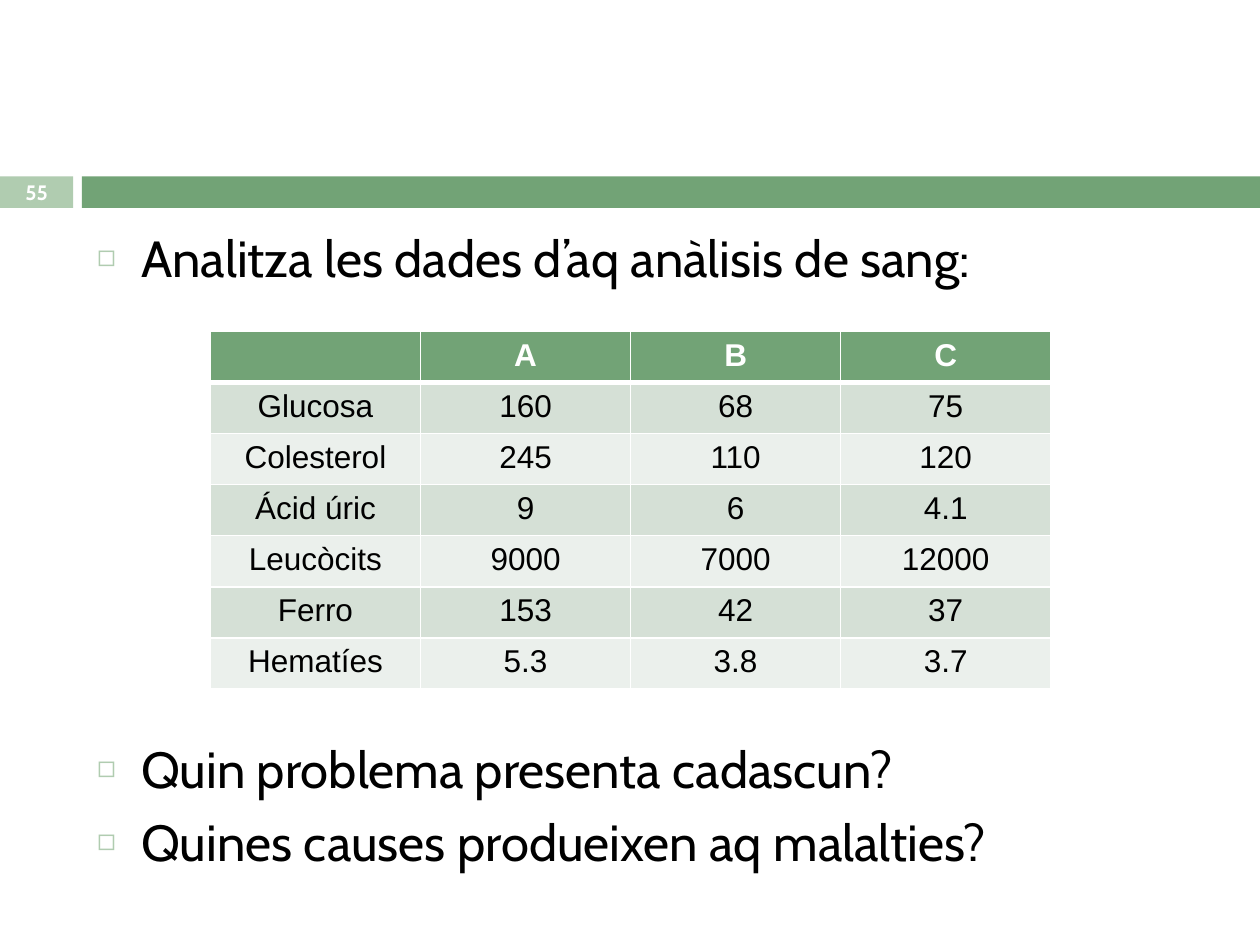
from lxml.etree import SubElement
from pptx import Presentation
from pptx.dml.color import RGBColor
from pptx.enum.shapes import MSO_SHAPE as SHAPE
from pptx.enum.text import MSO_ANCHOR as ANCHOR, PP_ALIGN as ALIGN
from pptx.oxml.ns import qn
from pptx.util import Inches, Pt

COLORS = {"green": "72A376", "pale": "B0CCB0", "band": "D5E0D6",
          "light": "EBF0EC", "white": "FFFFFF", "black": "000000"}
PAGE = "55"
BARS = [("pale", 0, 0.58, PAGE), ("green", 0.65, 9.35, "")]
POINTS = [("Analitza les dades d’aq anàlisis de sang:", 7),
          ("Quin problema presenta cadascun?", 257),
          ("Quines causes produeixen aq malalties?", 7)]
ROWS = [("", "A", "B", "C"),
        ("Glucosa", "160", "68", "75"),
        ("Colesterol", "245", "110", "120"),
        ("Ácid úric", "9", "6", "4.1"),
        ("Leucòcits", "9000", "7000", "12000"),
        ("Ferro", "153", "42", "37"),
        ("Hematíes", "5.3", "3.8", "3.7")]
TABLE = (1.67, 2.63, 6.67, 2.84)


def rgb(name):
    return RGBColor.from_string(COLORS[name])


def style(p, size, font, color, bold=False):
    for r in p.runs:
        r.font.size, r.font.name, r.font.bold = Pt(size), font, bold
        r.font.color.rgb = rgb(color)


def add_bar(s, color, left, width, text):
    sp = s.shapes.add_shape(SHAPE.RECTANGLE, Inches(left), Inches(1.4),
                            Inches(width), Inches(0.25))
    sp.shadow.inherit = False
    sp.fill.solid()
    sp.fill.fore_color.rgb = rgb(color)
    sp.line.fill.background()
    tf = sp.text_frame
    tf.margin_top = tf.margin_bottom = 0
    tf.vertical_anchor = ANCHOR.MIDDLE
    if text:
        p = tf.paragraphs[0]
        p.text, p.alignment = text, ALIGN.CENTER
        style(p, 11.9, "Cabin", "white", True)


def add_bullet(p):
    pPr = p._p.get_or_add_pPr()
    pPr.set("marL", str(Inches(0.35)))
    pPr.set("indent", str(-Inches(0.35)))
    clr = SubElement(pPr, qn("a:buClr"))
    SubElement(clr, qn("a:srgbClr"), val=COLORS["pale"])
    SubElement(pPr, qn("a:buSzPct"), val="60000")
    SubElement(pPr, qn("a:buChar"), char="◻")


def fill_body(body):
    body.left, body.top, body.width, body.height = map(Inches, (0.67, 1.75, 8.92, 5.36))
    tf = body.text_frame
    tf.text = "\n".join(text for text, _ in POINTS)
    for p, (_, before) in zip(tf.paragraphs, POINTS):
        p.space_before = Pt(before)
        add_bullet(p)
        style(p, 29, "Cabin", "black")


def set_borders(cell, widths):
    tcPr = cell._tc.get_or_add_tcPr()
    for side, width in zip("LRTB", widths):
        ln = SubElement(tcPr, qn(f"a:ln{side}"), w=str(Pt(width)))
        fill = SubElement(ln, qn("a:solidFill"))
        SubElement(fill, qn("a:srgbClr"), val=COLORS["white"])


def add_data_table(s):
    table = s.shapes.add_table(len(ROWS), len(ROWS[0]), *map(Inches, TABLE)).table
    for i, row in enumerate(ROWS):
        header = i == 0
        color = "green" if header else ("light", "band")[i % 2]
        for j, text in enumerate(row):
            cell = table.cell(i, j)
            set_borders(cell, (1, 1, 3 if i == 1 else 1, 3 if header else 1))
            cell.fill.solid()
            cell.fill.fore_color.rgb = rgb(color)
            p = cell.text_frame.paragraphs[0]
            p.text, p.alignment = text, ALIGN.CENTER
            style(p, 18, "Arial", "white" if header else "black", header)


def main():
    """Build the blood test slide."""
    prs = Presentation()
    prs.slide_width, prs.slide_height = Inches(10), Inches(7.5)
    s = prs.slides.add_slide(prs.slide_layouts[1])
    title = s.shapes.title._element
    title.getparent().remove(title)
    for bar in BARS:
        add_bar(s, *bar)
    fill_body(s.placeholders[1])
    add_data_table(s)
    prs.save("out.pptx")


if __name__ == "__main__":
    main()
